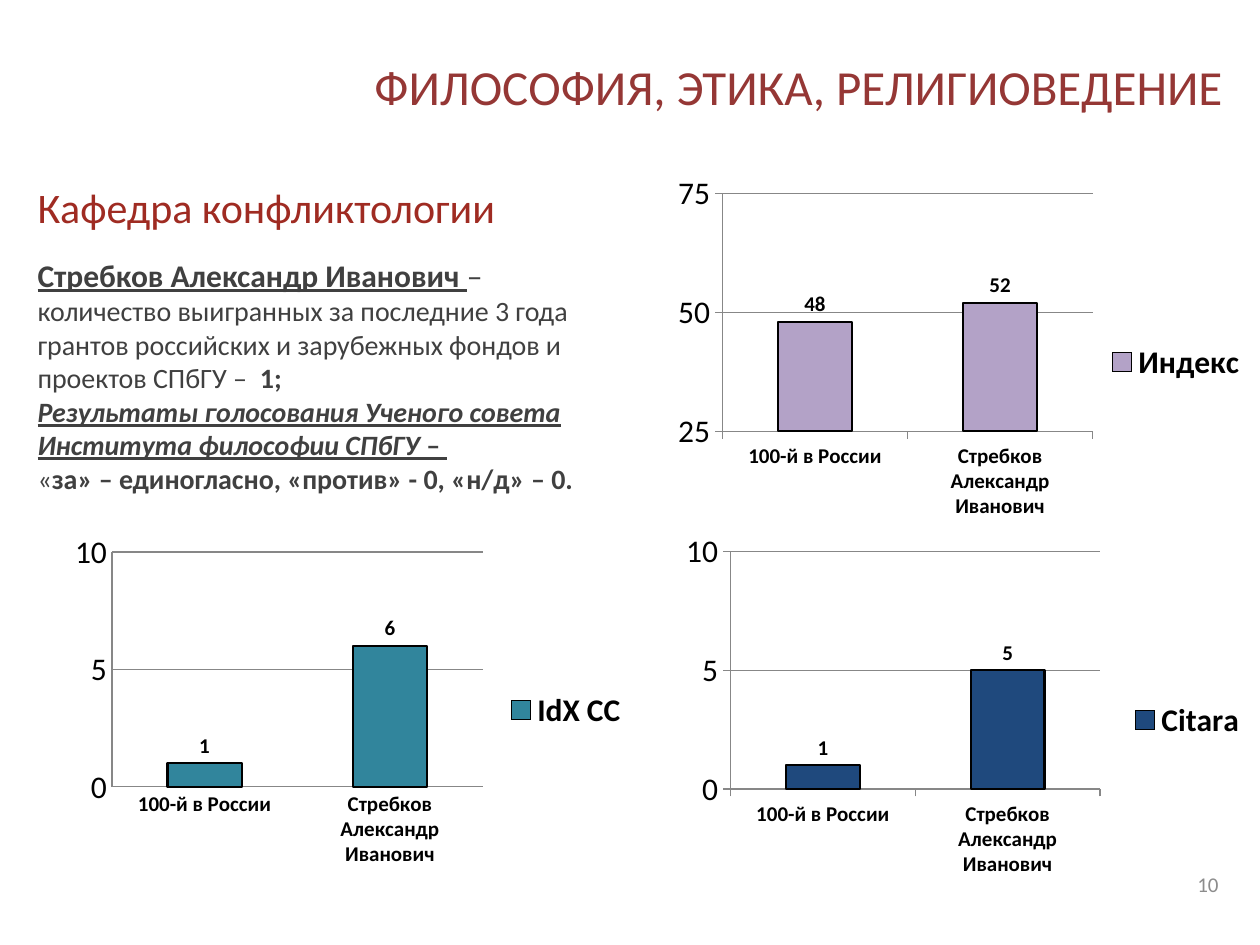
from dataclasses import dataclass

from lxml.etree import SubElement
from pptx import Presentation
from pptx.chart.data import CategoryChartData
from pptx.dml.color import RGBColor
from pptx.enum.chart import XL_CHART_TYPE as ChartType
from pptx.enum.chart import XL_LABEL_POSITION as LabelPosition
from pptx.enum.chart import XL_LEGEND_POSITION as LegendPosition
from pptx.enum.chart import XL_TICK_MARK as TickMark
from pptx.enum.text import MSO_ANCHOR as Anchor
from pptx.enum.text import PP_ALIGN as Align
from pptx.oxml.ns import qn
from pptx.util import Inches, Pt

FONT = "Calibri"
GRAY = "878787"
CATEGORIES = ("100-й в России", "Стребков Александр Иванович")
CHART_SIZE = (4.92, 3.15)
LEFT_COLUMN, RIGHT_COLUMN = 0.17, 5.08


@dataclass
class IndexChart:
    name: str
    values: tuple[int, int]
    fill: str
    corner: tuple[float, float]
    low: int
    high: int
    step: int
    plot: tuple[float, float, float, float]
    ticks: TickMark = TickMark.OUTSIDE


@dataclass
class Span:
    text: str
    size: int = 16
    bold: bool = False
    italic: bool = False
    underline: bool = False


CHARTS = (
    IndexChart("Citara", (1, 5), "1F497D", (RIGHT_COLUMN, 4.14), 0, 10, 5,
               (0.146, 0.075, 0.596, 0.599)),
    IndexChart("IdX CC", (1, 6), "31859C", (LEFT_COLUMN, 4.06), 0, 10, 5,
               (0.146, 0.102, 0.598, 0.592), TickMark.NONE),
    IndexChart("Индекс", (48, 52), "B3A2C7", (RIGHT_COLUMN, 1.3), 25, 75, 25,
               (0.133, 0.075, 0.597, 0.599)),
)

# A vertical tab stands for a line break inside a paragraph.
DETAILS = (
    (Span("Стребков Александр Иванович ", 18, bold=True, underline=True),
     Span("–\v", 18),
     Span("количество выигранных за последние 3 года грантов российских "
          "и зарубежных фондов и проектов СПбГУ – "),
     Span(" 1;", bold=True)),
    (Span("Результаты голосования Ученого совета Института философии СПбГУ ",
          bold=True, italic=True, underline=True),
     Span("– ", bold=True, underline=True)),
    (Span("«"),
     Span("за» – единогласно, «против» - 0, «н/д» – 0.", bold=True)),
)


def color(value: str) -> RGBColor:
    return RGBColor.from_string(value)


def style_font(font, size: float, fill: str, bold: bool = False) -> None:
    font.name, font.size, font.bold = FONT, Pt(size), bold
    font.color.rgb = color(fill)


def style_line(line, fill: str, width: float) -> None:
    line.color.rgb = color(fill)
    line.width = Pt(width)


def add_text_box(page, area: tuple, anchor=Anchor.MIDDLE):
    frame = page.shapes.add_textbox(*map(Inches, area)).text_frame
    frame.word_wrap = True
    frame.vertical_anchor = anchor
    return frame


def add_label(page, area: tuple, text: str, size: int, fill: str, align=Align.LEFT) -> None:
    frame = add_text_box(page, area)
    frame.text = text
    para = frame.paragraphs[0]
    para.alignment = align
    style_font(para.runs[0].font, size, fill)


def add_details(page) -> None:
    frame = add_text_box(page, (0.2, 1.98, 4.8, 2.32), Anchor.TOP)
    for number, spans in enumerate(DETAILS):
        para = frame.add_paragraph() if number else frame.paragraphs[0]
        for span in spans:
            run = para.add_run()
            run.text = span.text.rstrip("\v")
            style_font(run.font, span.size, "404040", span.bold)
            run.font.italic, run.font.underline = span.italic, span.underline
            if span.text.endswith("\v"):
                para.add_line_break()


def place_plot(chart, shares: tuple) -> None:
    """Fix the inner plot area at shares of the chart's size."""
    area = chart.element.find(".//" + qn("c:plotArea"))
    layout = area.find(qn("c:layout"))
    if layout is None:
        layout = SubElement(area, qn("c:layout"))
        area.insert(0, layout)
    manual = SubElement(layout, qn("c:manualLayout"))
    settings = [("layoutTarget", "inner"), ("xMode", "edge"), ("yMode", "edge")]
    settings += zip("xywh", map(str, shares))
    for tag, value in settings:
        SubElement(manual, qn(f"c:{tag}")).set("val", value)


def add_index_chart(page, item: IndexChart) -> None:
    data = CategoryChartData()
    data.categories = CATEGORIES
    data.add_series(item.name, item.values)
    chart = page.shapes.add_chart(
        ChartType.COLUMN_CLUSTERED, *map(Inches, item.corner + CHART_SIZE), data).chart
    chart.has_title = False
    style_font(chart.font, 18, "000000")
    place_plot(chart, item.plot)

    chart.has_legend = True
    chart.legend.position = LegendPosition.RIGHT
    chart.legend.include_in_layout = False
    style_font(chart.legend.font, 18, "000000", bold=True)

    names, scale = chart.category_axis, chart.value_axis
    for axis in (names, scale):
        axis.major_tick_mark = item.ticks
        axis.minor_tick_mark = TickMark.NONE
        style_line(axis.format.line, GRAY, 0.75)
    style_font(names.tick_labels.font, 12, "000000", bold=True)
    scale.minimum_scale, scale.maximum_scale = item.low, item.high
    scale.major_unit = item.step
    scale.has_major_gridlines = True
    style_line(scale.major_gridlines.format.line, GRAY, 0.75)

    plot = chart.plots[0]
    plot.gap_width = 150
    plot.vary_by_categories = False
    series = plot.series[0]
    series.format.fill.solid()
    series.format.fill.fore_color.rgb = color(item.fill)
    style_line(series.format.line, "000000", 1.25)
    labels = series.data_labels
    labels.show_value = True
    labels.position = LabelPosition.OUTSIDE_END
    style_font(labels.font, 12, "000000", bold=True)


def add_title(page) -> None:
    title = page.shapes.title
    title.left, title.top, title.width, title.height = map(Inches, (2.56, 0.3, 7.24, 0.77))
    frame = title.text_frame
    frame.text = "ФИЛОСОФИЯ, ЭТИКА, РЕЛИГИОВЕДЕНИЕ"
    frame.vertical_anchor = Anchor.MIDDLE
    frame.paragraphs[0].alignment = Align.RIGHT
    style_font(frame.paragraphs[0].runs[0].font, 28, "953735")


def main() -> None:
    deck = Presentation()
    deck.slide_width, deck.slide_height = Inches(10), Inches(7.5)
    page = deck.slides.add_slide(deck.slide_layouts.get_by_name("Title Only"))
    add_title(page)
    for item in CHARTS:
        add_index_chart(page, item)
    add_label(page, (7.44, 6.82, 2.33, 0.4), "10", 12, "8C8C8C", Align.RIGHT)
    add_label(page, (0.2, 1.39, 4.25, 0.5), "Кафедра конфликтологии", 24, "9F2B22")
    add_details(page)
    deck.save("out.pptx")


if __name__ == "__main__":
    main()
